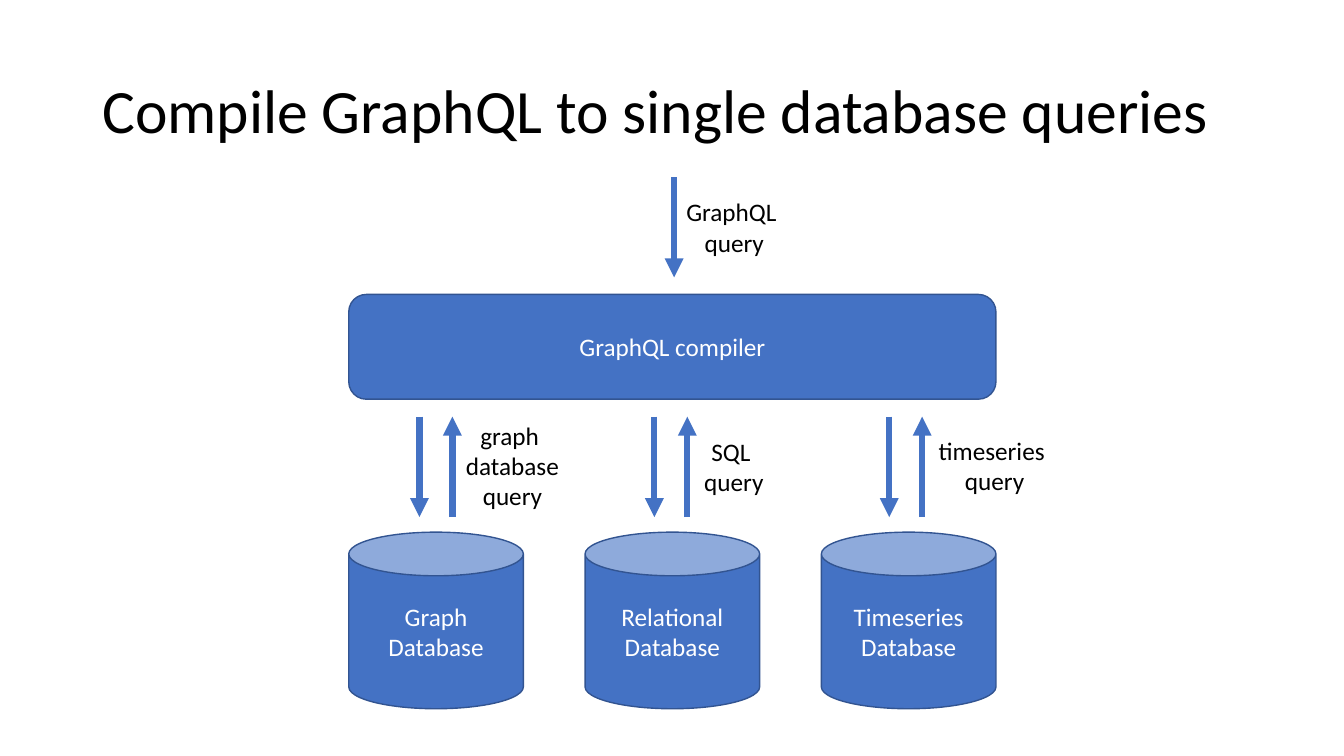
from dataclasses import dataclass

from lxml import etree
from pptx import Presentation
from pptx import util as u
from pptx.dml.color import RGBColor
from pptx.enum import shapes, text
from pptx.oxml.ns import qn
from pptx.shapes.autoshape import Shape
from pptx.slide import Slide


@dataclass(frozen=True)
class Theme:
    font: str = "Calibri"
    fill: RGBColor = RGBColor(0x44, 0x72, 0xC4)
    edge: RGBColor = RGBColor(0x32, 0x54, 0x91)
    dark: RGBColor = RGBColor(0, 0, 0)
    light: RGBColor = RGBColor(255, 255, 255)
    title: float = 44
    body: float = 18
    thin: float = 1
    thick: float = 4.5


@dataclass(frozen=True)
class Box:
    """Left, top, width and height in centimetres."""
    x: float
    y: float
    w: float
    h: float

    def area(self) -> tuple[u.Cm, u.Cm, u.Cm, u.Cm]:
        return u.Cm(self.x), u.Cm(self.y), u.Cm(self.w), u.Cm(self.h)


@dataclass(frozen=True)
class Store:
    """A database, with the query sent to it and that label's place."""
    name: str
    query: str
    label: Box


THEME = Theme()
LEFT, WIDTH = 8.79, 16.31
CAN_W, CAN_H, CAN_Y = 4.4, 4.45, 13.41
DOWN_X, DOWN_STEP, UP_GAP = 10.57, 5.92, 0.83
ARROW_Y, ARROW_H = 10.5, 2.53

STORES = [
    Store("Graph Database", "graph \ndatabase\nquery", Box(11.48, 10.46, 2.87, 2.57)),
    Store("Relational Database", "SQL \nquery", Box(17.48, 10.87, 2.03, 1.8)),
    Store("Timeseries Database", "timeseries \nquery", Box(23.39, 10.85, 3.35, 1.8)),
]


def write(shape: Shape, words: str, *, size: float = THEME.body,
          color: RGBColor = THEME.dark, align: text.PP_ALIGN = text.PP_ALIGN.CENTER,
          anchor: text.MSO_ANCHOR = text.MSO_ANCHOR.MIDDLE,
          wrap: bool = True, space: float | None = None) -> None:
    frame = shape.text_frame
    frame.word_wrap = wrap
    frame.vertical_anchor = anchor
    para = frame.paragraphs[0]
    para.text = words
    para.alignment = align
    para.line_spacing = space
    for run in para.runs:
        run.font.name = THEME.font
        run.font.size = u.Pt(size)
        run.font.color.rgb = color


def block(slide: Slide, kind: shapes.MSO_SHAPE, box: Box, words: str) -> None:
    shape = slide.shapes.add_shape(kind, *box.area())
    shape.shadow.inherit = False
    shape.fill.solid()
    shape.fill.fore_color.rgb = THEME.fill
    shape.line.color.rgb = THEME.edge
    shape.line.width = u.Pt(THEME.thin)
    write(shape, words, color=THEME.light)


def label(slide: Slide, box: Box, words: str) -> None:
    shape = slide.shapes.add_textbox(*box.area())
    write(shape, words, anchor=text.MSO_ANCHOR.TOP, wrap=False)
    shape.text_frame.auto_size = text.MSO_AUTO_SIZE.SHAPE_TO_FIT_TEXT


def arrow(slide: Slide, x: float, start: float, end: float) -> None:
    """Draw an upright arrow with its head at end."""
    line = slide.shapes.add_connector(
        shapes.MSO_CONNECTOR.STRAIGHT, u.Cm(x), u.Cm(start), u.Cm(x), u.Cm(end))
    line.line.color.rgb = THEME.fill
    line.line.width = u.Pt(THEME.thick)
    etree.SubElement(line.line._get_or_add_ln(), qn("a:tailEnd"), type="triangle")
    etree.SubElement(line._element.spPr, qn("a:effectLst"))


def main() -> None:
    deck = Presentation()
    deck.slide_width, deck.slide_height = u.Cm(33.87), u.Cm(19.05)
    slide = deck.slides.add_slide(deck.slide_layouts[6])

    title = slide.shapes.add_textbox(*Box(2.33, 1.01, 29.21, 3.68).area())
    write(title, "Compile GraphQL to single database queries",
          size=THEME.title, align=text.PP_ALIGN.LEFT, space=0.9)

    block(slide, shapes.MSO_SHAPE.ROUNDED_RECTANGLE,
          Box(LEFT, 7.42, WIDTH, 2.64), "GraphQL compiler")
    arrow(slide, 16.99, 4.47, 6.99)
    label(slide, Box(17.02, 4.83, 2.97, 1.8), "GraphQL \nquery")

    step = (WIDTH - CAN_W) / (len(STORES) - 1)
    foot = ARROW_Y + ARROW_H
    for i, store in enumerate(STORES):
        block(slide, shapes.MSO_SHAPE.CAN,
              Box(LEFT + i * step, CAN_Y, CAN_W, CAN_H), store.name)
        down = DOWN_X + i * DOWN_STEP
        arrow(slide, down, ARROW_Y, foot)
        arrow(slide, down + UP_GAP, foot, ARROW_Y)
        label(slide, store.label, store.query)

    deck.save("out.pptx")


if __name__ == "__main__":
    main()
